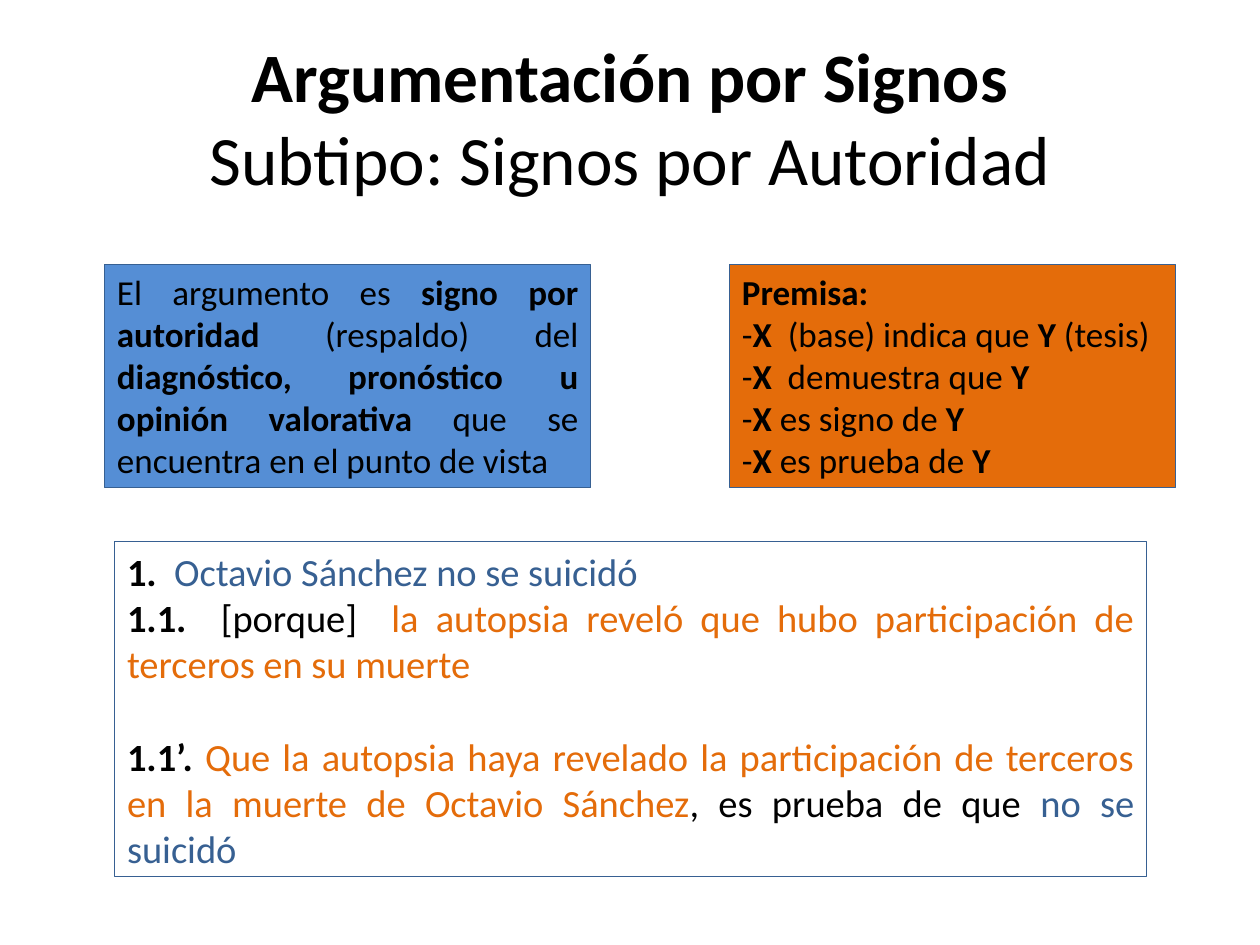
from pptx import Presentation
from pptx.dml.color import RGBColor
from pptx.enum.shapes import MSO_SHAPE as Shape
from pptx.enum.text import MSO_ANCHOR as Anchor, MSO_AUTO_SIZE as Fit, PP_ALIGN as Align
from pptx.util import Inches, Pt

COLORS = {
    "black": "000000",
    "white": "FFFFFF",
    "blue": "558ED5",
    "navy": "376092",
    "orange": "E46C0A",
}
FONT = "Calibri"


def color(name):
    return RGBColor.from_string(COLORS[name])


def write(para, text, size=20, bold=False, ink="black"):
    run = para.add_run()
    run.text = text
    font = run.font
    font.name, font.size, font.bold = FONT, Pt(size), bold
    font.color.rgb = color(ink)


def mark(para, text, **style):
    """Write text in which ** switches bold on and off."""
    for i, part in enumerate(text.split("**")):
        if part:
            write(para, part, bold=i % 2 == 1, **style)


class Deck:
    def __init__(self, width, height):
        self.prs = Presentation()
        self.prs.slide_width, self.prs.slide_height = Inches(width), Inches(height)
        self.slide = None

    def add(self):
        self.slide = self.prs.slides.add_slide(self.prs.slide_layouts[5])

    def place(self, shape, box):
        shape.left, shape.top, shape.width, shape.height = map(Inches, box)

    def title(self, box, head, sub, size):
        shape = self.slide.shapes.title
        self.place(shape, box)
        frame = shape.text_frame
        frame.auto_size = Fit.NONE
        frame.vertical_anchor = Anchor.MIDDLE
        para = frame.paragraphs[0]
        para.alignment = Align.CENTER
        write(para, head, size, bold=True)
        para.add_line_break()
        write(para, sub, size)

    def panel(self, box, fill, lines, size=20, gaps=None):
        """Draw a framed box; lines hold (text, ink) parts, gaps give space before."""
        shape = self.slide.shapes.add_shape(Shape.RECTANGLE, *map(Inches, box))
        shape.shadow.inherit = False
        shape.fill.solid()
        shape.fill.fore_color.rgb = color(fill)
        shape.line.color.rgb = color("navy")
        shape.line.width = Pt(0.75)
        frame = shape.text_frame
        frame.word_wrap = True
        frame.auto_size = Fit.SHAPE_TO_FIT_TEXT
        frame.vertical_anchor = Anchor.TOP
        for i, parts in enumerate(lines):
            para = frame.add_paragraph() if i else frame.paragraphs[0]
            para.alignment = Align.JUSTIFY
            if gaps and i in gaps:
                para.space_before = Pt(gaps[i])
            for text, ink in parts:
                mark(para, text, size=size, ink=ink)

    def save(self):
        self.prs.save("out.pptx")


def main():
    deck = Deck(10, 7.5)
    deck.add()
    deck.title((0.5, 0.3, 9, 1.25), "Argumentación por Signos",
               "Subtipo: Signos por Autoridad", 39.6)

    idea = ("El argumento es **signo por autoridad **(respaldo) del "
            "**diagnóstico, pronóstico u opinión valorativa **"
            "que se encuentra en el punto de vista")
    deck.panel((0.83, 2.1, 3.86, 1.77), "blue", [[(idea, "black")]])

    rules = [
        "**Premisa:**",
        "-**X  **(base) indica que **Y **(tesis)",
        "-**X ** demuestra que **Y**",
        "-**X **es signo de **Y**",
        "-**X** es prueba de** Y**",
    ]
    deck.panel((5.79, 2.1, 3.54, 1.77), "orange",
               [[(rule, "black")] for rule in rules])

    case = [
        [("**1.  **", "black"), ("Octavio Sánchez no se suicidó", "navy")],
        [("**1.1.  **[porque]  ", "black"),
         ("la autopsia reveló que hubo participación de terceros "
          "en su muerte", "orange")],
        [("**1.1’. **", "black"),
         ("Que la autopsia haya revelado la participación de terceros "
          "en la muerte de Octavio Sánchez", "orange"),
         (", es prueba de que ", "black"), ("no se suicidó", "navy")],
    ]
    deck.panel((0.91, 4.3, 8.19, 2.66), "white", case, size=22, gaps={2: 26.4})
    deck.save()


if __name__ == "__main__":
    main()
